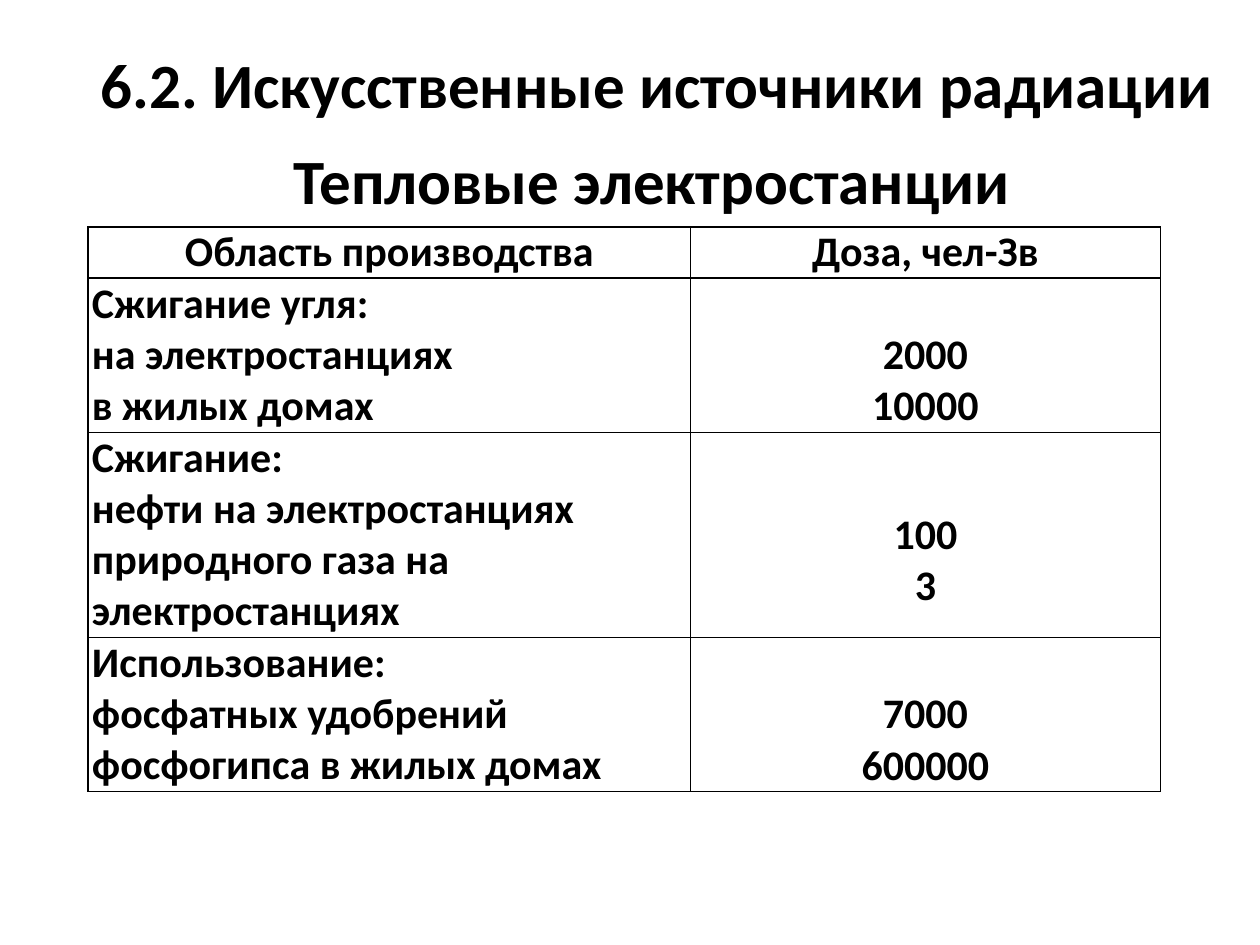
"""Build the slide on artificial radiation sources with its dose table."""
from lxml import etree
from pptx import Presentation
from pptx import util as u
from pptx.dml import color
from pptx.enum import text
from pptx.oxml import ns

TITLE = "6.2. Искусственные источники радиации"
SUBTITLE = "Тепловые электростанции"
HEADER = ("Область производства", "Доза, чел-Зв")
SOURCES = [
    (("Сжигание угля:", "на электростанциях", "в жилых домах"), ("2000", "10000")),
    (("Сжигание:", "нефти на электростанциях", "природного газа на электростанциях"),
     ("100", "3")),
    (("Использование:", "фосфатных удобрений", "фосфогипса в жилых домах"),
     ("7000", "600000")),
]
COLUMN_WIDTHS = (4.78, 3.73)
ROW_HEIGHTS = (0.4, 1.2, 1.6, 1.2)
LINE_HEIGHT = 0.41
BLACK = "000000"
FONT = {"name": "Calibri", "bold": True}
LEFT, CENTER = text.PP_ALIGN.LEFT, text.PP_ALIGN.CENTER
MIDDLE = text.MSO_ANCHOR.MIDDLE


def apply(target, values):
    for name, value in values.items():
        setattr(target, name, value)


def paint(font, hex_color):
    font.color.rgb = color.RGBColor.from_string(hex_color)


def write(frame, lines, size, align):
    for index, line in enumerate(lines):
        para = frame.add_paragraph() if index else frame.paragraphs[0]
        para.alignment = align
        span = para.add_run()
        span.text = line
        apply(span.font, {**FONT, "size": u.Pt(size)})
        paint(span.font, BLACK)


def place_heading(box, line, area, anchor, indent):
    apply(box, dict(zip(("left", "top", "width", "height"), map(u.Inches, area))))
    apply(box.text_frame, {
        "word_wrap": True, "auto_size": text.MSO_AUTO_SIZE.NONE,
        "vertical_anchor": anchor, "margin_left": u.Inches(indent), "margin_right": 0})
    write(box.text_frame, [line], 36, LEFT)


def draw_borders(cell):
    properties = cell._tc.get_or_add_tcPr()
    for index, side in enumerate(("lnL", "lnR", "lnT", "lnB")):
        line = etree.Element(ns.qn(f"a:{side}"), w=str(u.Pt(1)))
        fill = etree.SubElement(line, ns.qn("a:solidFill"))
        etree.SubElement(fill, ns.qn("a:srgbClr"), val=BLACK)
        properties.insert(index, line)


def fill_cell(cell, lines, align, top_margin=0):
    apply(cell, {
        "vertical_anchor": MIDDLE, "margin_left": u.Inches(0.03),
        "margin_right": u.Inches(0.03), "margin_top": u.Inches(top_margin),
        "margin_bottom": 0})
    write(cell.text_frame, lines, 24, align)
    cell.fill.background()
    draw_borders(cell)


def add_dose_table(page):
    frame = page.shapes.add_table(
        len(ROW_HEIGHTS), len(COLUMN_WIDTHS), u.Inches(0.7), u.Inches(1.8),
        u.Inches(sum(COLUMN_WIDTHS)), u.Inches(sum(ROW_HEIGHTS)))
    table = frame.table
    apply(table, {"first_row": False, "horz_banding": False})
    for column, width in zip(table.columns, COLUMN_WIDTHS):
        column.width = u.Inches(width)
    for row, height in zip(table.rows, ROW_HEIGHTS):
        row.height = u.Inches(height)
    for index, heading in enumerate(HEADER):
        fill_cell(table.cell(0, index), [heading], CENTER)
    for index, (areas, doses) in enumerate(SOURCES, 1):
        fill_cell(table.cell(index, 0), areas, LEFT)
        fill_cell(table.cell(index, 1), doses, CENTER, LINE_HEIGHT)


def main():
    deck = Presentation()
    apply(deck, {"slide_width": u.Inches(10), "slide_height": u.Inches(7.5)})
    page = deck.slides.add_slide(deck.slide_layouts[5])
    place_heading(page.shapes.title, TITLE, (0.7, 0.31, 9.11, 0.71),
                  text.MSO_ANCHOR.TOP, 0.1)
    subtitle = page.shapes.add_textbox(0, 0, 0, 0)
    place_heading(subtitle, SUBTITLE, (1.61, 1.07, 6.57, 0.71), MIDDLE, 0.72)
    add_dose_table(page)
    deck.save("out.pptx")


if __name__ == "__main__":
    main()
